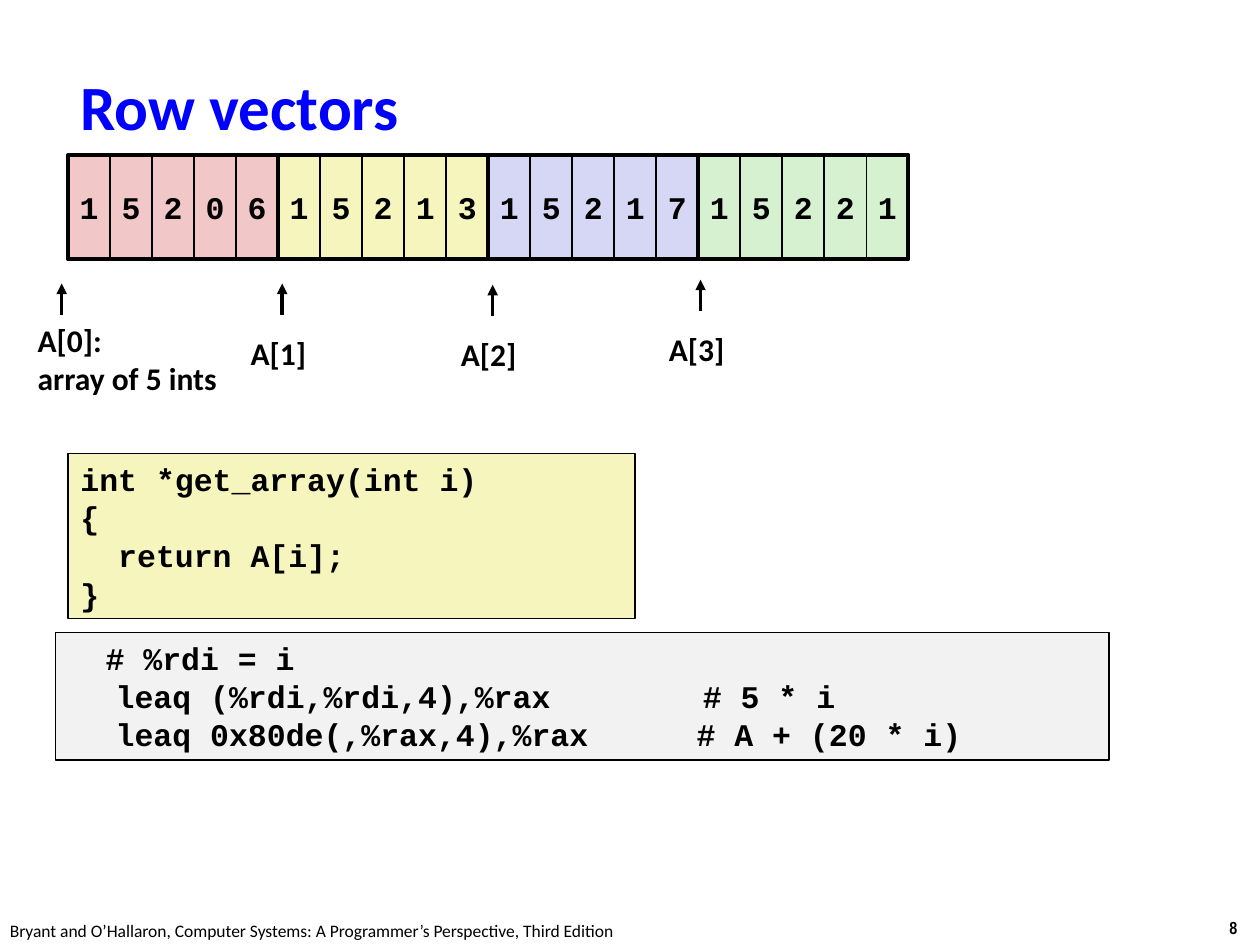
from lxml.etree import SubElement
from pptx import Presentation
from pptx.dml.color import RGBColor
from pptx.enum.shapes import MSO_CONNECTOR, MSO_SHAPE
from pptx.enum.text import MSO_ANCHOR, PP_ALIGN
from pptx.oxml.ns import qn
from pptx.util import Inches, Pt

BLACK = RGBColor(0, 0, 0)
BLUE = RGBColor(0, 0, 255)
PINK = RGBColor(0xF1, 0xC7, 0xC7)
CREAM = RGBColor(0xF6, 0xF5, 0xBD)
LILAC = RGBColor(0xD6, 0xD6, 0xF5)
MINT = RGBColor(0xD5, 0xF1, 0xCF)
GRAY = RGBColor(0xF2, 0xF2, 0xF2)
SANS = "Calibri"
MONO = "Courier New"
ROWS = [("15206", PINK), ("15213", CREAM), ("15217", LILAC), ("15221", MINT)]


def write(par, text, font=SANS, size=18, bold=True, color=BLACK):
    run = par.add_run()
    run.text = text
    run.font.name = font
    run.font.size = Pt(size)
    run.font.bold = bold
    run.font.color.rgb = color


def lines(frame, texts):
    for i, text in enumerate(texts):
        par = frame.add_paragraph() if i else frame.paragraphs[0]
        par.alignment = PP_ALIGN.LEFT
        yield par, text


def label(shapes, box, texts, wrap=False, **style):
    frame = shapes.add_textbox(*map(Inches, box)).text_frame
    frame.word_wrap = wrap
    for par, text in lines(frame, texts):
        write(par, text, **style)
    return frame


def rect(shapes, box, fill=None, weight=1):
    shape = shapes.add_shape(MSO_SHAPE.RECTANGLE, *map(Inches, box))
    shape.shadow.inherit = False
    if fill is None:
        shape.fill.background()
    else:
        shape.fill.solid()
        shape.fill.fore_color.rgb = fill
    shape.line.color.rgb = BLACK
    shape.line.width = Pt(weight)
    return shape


def title(shapes, box, text):
    frame = label(shapes, box, [text], wrap=True, size=36, color=BLUE)
    frame.vertical_anchor = MSO_ANCHOR.MIDDLE


def strip(shapes, box):
    left, top, width, height = box
    group = shapes.add_group_shape().shapes
    span = width / len(ROWS)
    for i, (digits, fill) in enumerate(ROWS):
        step = span / len(digits)
        for j, digit in enumerate(digits):
            spot = left + i * span + j * step
            frame = rect(group, (spot, top, step, height), fill).text_frame
            frame.word_wrap = False
            frame.vertical_anchor = MSO_ANCHOR.MIDDLE
            par = frame.paragraphs[0]
            par.alignment = PP_ALIGN.CENTER
            write(par, digit, MONO)
    for i in range(len(ROWS)):
        rect(group, (left + i * span, top, span, height), weight=2.25)


def arrow(shapes, x, top, height):
    line = shapes.add_connector(
        MSO_CONNECTOR.STRAIGHT,
        Inches(x), Inches(top + height), Inches(x), Inches(top))
    line.line.color.rgb = BLACK
    line.line.width = Pt(2)
    SubElement(line.line._get_or_add_ln(), qn("a:tailEnd"), type="triangle")
    SubElement(line._element.spPr, qn("a:effectLst"))


def pointer(shapes, box, texts, x, gap=0.1):
    left, top, width, height = box
    arrow(shapes, x, top, 0.25)
    label(shapes, (left, top + 0.25 + gap, width, height), texts)


def code(shapes, box, fill, rows):
    frame = rect(shapes, box, fill).text_frame
    frame.word_wrap = True
    frame.vertical_anchor = MSO_ANCHOR.TOP
    for par, (text, indent, stops) in lines(frame, rows):
        par.line_spacing = Pt(21.8)
        props = par._p.get_or_add_pPr()
        if indent:
            props.set("marL", str(Inches(indent)))
            props.set("indent", "0")
        if stops:
            tabs = SubElement(props, qn("a:tabLst"))
            for stop in stops:
                SubElement(tabs, qn("a:tab"), pos=str(Inches(stop)), algn="l")
        write(par, text, MONO)


def footer(shapes, box):
    left, top, width, height = box
    label(shapes, (left, top + 0.02, 5.08, height),
          ["Bryant and O’Hallaron, Computer Systems: "
           "A Programmer’s Perspective, Third Edition"],
          size=10, bold=False)
    label(shapes, (left + width - 0.34, top, 0.34, height), ["8"],
          font="Arial Narrow", size=10)


def main():
    deck = Presentation()
    deck.slide_width, deck.slide_height = Inches(10), Inches(7.5)
    shapes = deck.slides.add_slide(deck.slide_layouts[6]).shapes
    footer(shapes, (-0.02, 7.23, 10.02, 0.27))
    title(shapes, (0.54, 0.52, 8.36, 0.63), "Row vectors")
    code(shapes, (0.54, 3.6, 4.5, 1.31), CREAM, [
        ("int *get_array(int i)", 0, ()),
        ("{", 0, ()),
        ("return A[i];", 0.3, ()),
        ("}", 0, ())])
    code(shapes, (0.44, 5.02, 8.36, 1.01), GRAY, [
        ("# %rdi = i", 0.3, ()),
        ("\tleaq (%rdi,%rdi,4),%rax\t# 5 * i", 0, (0.38, 5.04)),
        ("\tleaq 0x80de(,%rax,4),%rax\t# A + (20 * i)", 0, (0.38, 4.99))])
    strip(shapes, (0.54, 1.23, 6.67, 0.83))
    pointer(shapes, (0.2, 2.25, 1.65, 0.71),
            ["A[0]:", "array of 5 ints"], 0.49, gap=0)
    for i, (x, top) in enumerate([(2.24, 2.25), (3.91, 2.26), (5.56, 2.22)], 1):
        pointer(shapes, (x - 0.35, top, 0.65, 0.4), [f"A[{i}]"], x)
    deck.save("out.pptx")


if __name__ == "__main__":
    main()
